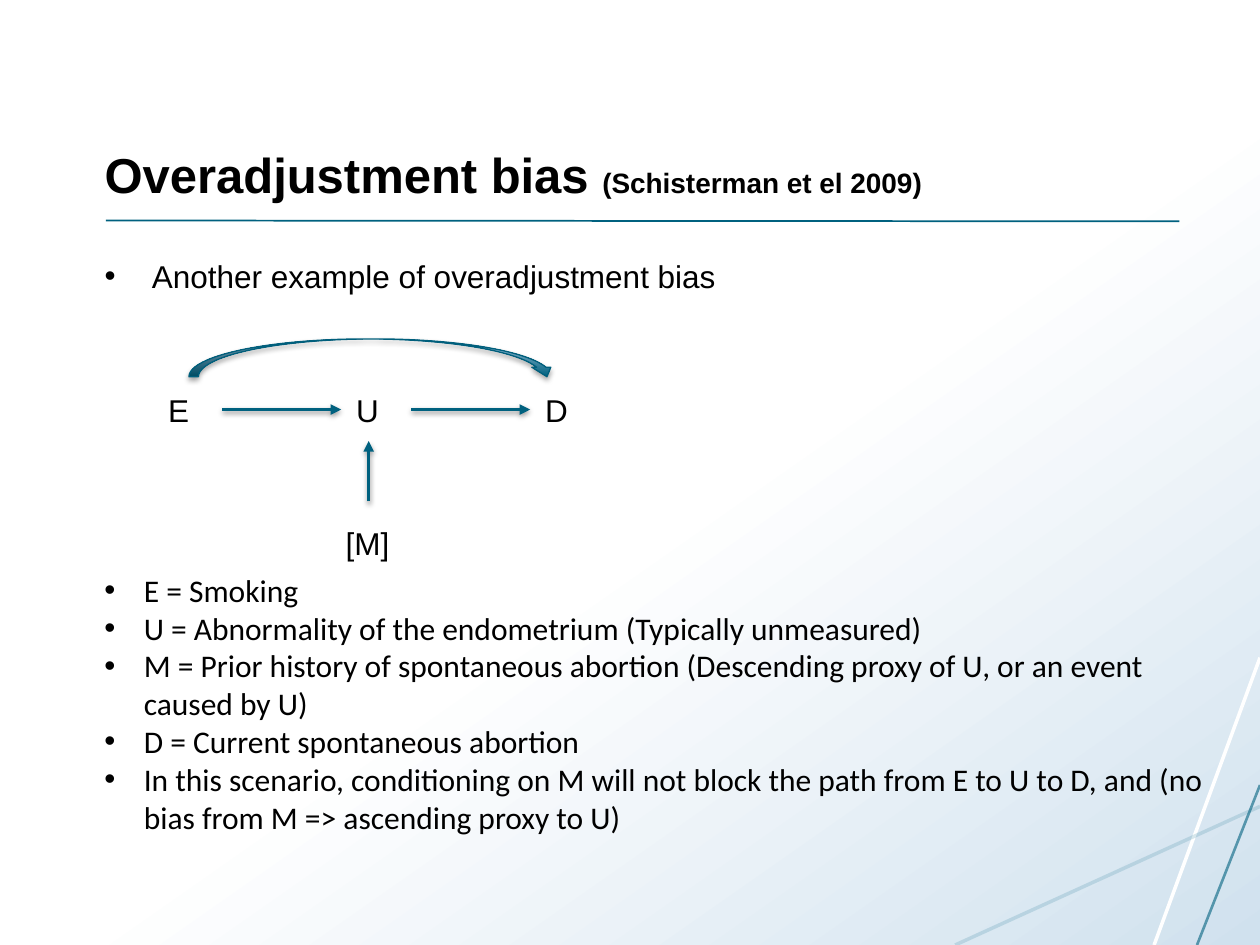
from lxml import etree
from pptx import Presentation
from pptx.dml.color import RGBColor
from pptx.enum import shapes, text
from pptx.oxml import ns
from pptx.util import Pt

BLACK = RGBColor(0x00, 0x00, 0x00)
WHITE = RGBColor(0xFF, 0xFF, 0xFF)
TEAL = RGBColor(0x00, 0x61, 0x7F)
EDGE_TEAL = RGBColor(0x00, 0x5F, 0x7C)
SOFT_TEAL = RGBColor(0x15, 0x71, 0x8F)
PALE_BLUE = RGBColor(0xA9, 0xC7, 0xE0)
HAZE_BLUE = RGBColor(0xD0, 0xE1, 0xEE)

DEFINITIONS = [
    "E = Smoking",
    "U = Abnormality of the endometrium (Typically unmeasured)",
    "M = Prior history of spontaneous abortion (Descending proxy of U, or an event caused by U)",
    "D = Current spontaneous abortion",
    "In this scenario, conditioning on M will not block the path from E to U to D, "
    "and (no bias from M => ascending proxy to U)",
]
NODE_X, NODE_STEP, NODE_Y = 102, 108, 234
MEDIATOR_Y = 310


def add_child(parent, tag, **attributes):
    """Append a DrawingML element with the given attributes."""
    child = etree.SubElement(parent, ns.qn(tag))
    for name, value in attributes.items():
        child.set(name, str(value))
    return child


def set_gradient(fill, start, end, angle, start_position=0):
    """Give a fill a two-stop linear gradient."""
    fill.gradient()
    fill.gradient_angle = angle
    for stop, color, position in zip(fill.gradient_stops, (start, end), (start_position, 1)):
        stop.color.rgb = color
        stop.position = position


def set_shadow(properties, opacity=0, distance=0):
    """Replace the theme shadow by a soft downward one, or by none."""
    for inherited in properties.findall(ns.qn("a:effectLst")):
        properties.remove(inherited)
    effects = add_child(properties, "a:effectLst")
    if opacity:
        shadow = add_child(effects, "a:outerShdw", blurRad=Pt(3.1), dist=Pt(distance),
                           dir=90 * 60000, rotWithShape=0)
        tint = add_child(shadow, "a:srgbClr", val=BLACK)
        add_child(tint, "a:alpha", val=opacity * 1000)


def add_line(slide, start, end, color, width, opacity=100):
    """Draw a straight line between two points."""
    stroke = slide.shapes.add_connector(
        shapes.MSO_CONNECTOR.STRAIGHT, *(Pt(value) for value in (*start, *end)))
    stroke.line.width = Pt(width)
    stroke.line.color.rgb = color
    if opacity < 100:
        tint = stroke._element.spPr.find(".//" + ns.qn("a:srgbClr"))
        add_child(tint, "a:alpha", val=opacity * 1000)
    set_shadow(stroke._element.spPr)
    return stroke


def add_arrow(slide, start, end):
    """Draw a causal arrow with a soft shadow."""
    arrow = add_line(slide, start, end, TEAL, 2)
    add_child(arrow.line._get_or_add_ln(), "a:tailEnd", type="triangle")
    set_shadow(arrow._element.spPr, opacity=38, distance=1.6)


def add_direct_path(slide):
    """Draw the curved arrow from exposure to disease."""
    curve = slide.shapes.add_shape(
        shapes.MSO_SHAPE.CURVED_DOWN_ARROW, Pt(108), Pt(193.7), Pt(210), Pt(21.6))
    set_gradient(curve.fill, TEAL, PALE_BLUE, 90)
    curve.line.color.rgb = EDGE_TEAL
    curve.line.width = Pt(0.75)
    set_shadow(curve._element.spPr, opacity=35, distance=1.8)


def format_runs(paragraph, size, font="Arial", bold=False):
    """Apply one look to all runs of a paragraph."""
    for run in paragraph.runs:
        run.font.name, run.font.size, run.font.bold = font, Pt(size), bold
        run.font.color.rgb = BLACK


def set_bullet(paragraph, indent):
    """Give a paragraph a round bullet and a hanging indent."""
    properties = paragraph._p.get_or_add_pPr()
    properties.set("marL", str(Pt(indent)))
    properties.set("indent", str(-Pt(indent)))
    add_child(properties, "a:buFont", typeface="Arial")
    add_child(properties, "a:buChar", char="•")


def add_node(slide, label, x, y):
    """Write a diagram label centred on a point."""
    node = slide.shapes.add_textbox(Pt(x - 30), Pt(y - 15), Pt(60), Pt(30))
    node.text_frame.text = label
    node.text_frame.word_wrap = True
    node.text_frame.vertical_anchor = text.MSO_ANCHOR.MIDDLE
    node.text_frame.paragraphs[0].alignment = text.PP_ALIGN.CENTER
    format_runs(node.text_frame.paragraphs[0], 18)


def place(holder, left, top, width, height):
    """Move a placeholder and fix its text size."""
    holder.left, holder.top, holder.width, holder.height = map(Pt, (left, top, width, height))
    holder.text_frame.auto_size = text.MSO_AUTO_SIZE.NONE


def fill_title(title):
    """Write the heading and its smaller citation."""
    place(title, 52.6, 23.8, 620.6, 95.8)
    title.text_frame.vertical_anchor = text.MSO_ANCHOR.BOTTOM
    heading = title.text_frame.paragraphs[0]
    heading.text = "Overadjustment bias "
    heading.alignment = text.PP_ALIGN.LEFT
    citation = heading.add_run()
    citation.text = "(Schisterman et el 2009)"
    format_runs(heading, 28, bold=True)
    citation.font.size = Pt(16)


def fill_body(body):
    """Write the introductory bullet."""
    place(body, 52.6, 143.3, 591.8, 339.1)
    body.text_frame.text = "Another example of overadjustment bias"
    introduction = body.text_frame.paragraphs[0]
    format_runs(introduction, 18)
    set_bullet(introduction, 27)


def add_definitions(slide):
    """List the meaning of each diagram label."""
    legend = slide.shapes.add_textbox(Pt(52.6), Pt(322.6), Pt(648), Pt(159.8))
    legend.text_frame.word_wrap = True
    legend.text_frame.text = "\n".join(DEFINITIONS)
    for definition in legend.text_frame.paragraphs:
        format_runs(definition, 18, font="Calibri")
        set_bullet(definition, 22.5)


def add_backdrop(slide):
    """Draw the background, corner rays and title rule."""
    set_gradient(slide.background.fill, WHITE, HAZE_BLUE, 305, start_position=0.54)
    add_line(slide, (720, 375.8), (659.5, 540), WHITE, 2)
    add_line(slide, (720, 460.8), (545.8, 540), SOFT_TEAL, 2, opacity=16)
    add_line(slide, (720, 448.6), (684, 540), TEAL, 1.5, opacity=60)
    add_line(slide, (60.5, 126), (673.9, 126.5), TEAL, 1)


def add_diagram(slide):
    """Draw the causal diagram of E, U, D and M."""
    for index, label in enumerate("EUD"):
        x = NODE_X + index * NODE_STEP
        add_node(slide, label, x, NODE_Y)
        if label != "D":
            add_arrow(slide, (x + 25, NODE_Y), (x + 93, NODE_Y))
    mediator_x = NODE_X + NODE_STEP
    add_node(slide, "[M]", mediator_x, MEDIATOR_Y)
    add_arrow(slide, (mediator_x + 0.7, 286.5), (mediator_x + 0.7, 252))
    add_direct_path(slide)


def main():
    """Build and save the slide."""
    deck = Presentation()
    deck.slide_width, deck.slide_height = Pt(720), Pt(540)
    slide = deck.slides.add_slide(deck.slide_layouts[1])
    add_backdrop(slide)
    fill_title(slide.shapes.title)
    fill_body(slide.placeholders[1])
    add_diagram(slide)
    add_definitions(slide)
    deck.save("out.pptx")


if __name__ == "__main__":
    main()
